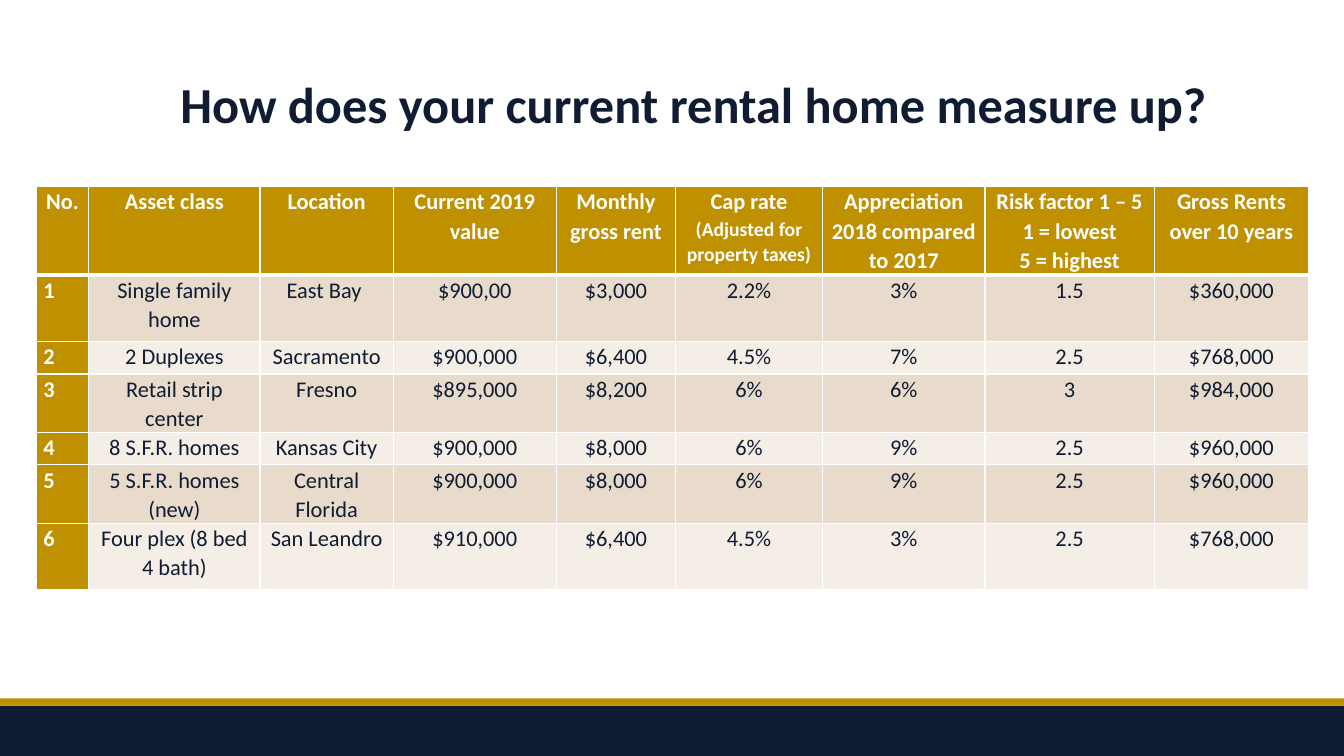
from lxml.etree import SubElement
from pptx import Presentation
from pptx.dml.color import RGBColor
from pptx.enum.shapes import MSO_SHAPE
from pptx.enum.text import MSO_ANCHOR, PP_ALIGN
from pptx.oxml.ns import qn
from pptx.util import Inches, Pt

NAVY, GOLD, WHITE = "0F1C32", "BF9000", "FFFFFF"
BANDS = ["E8DBCC", "F4EEE7"]
COL_WIDTHS = [0.52, 1.7, 1.32, 1.62, 1.18, 1.46, 1.61, 1.68, 1.53]
ROW_HEIGHTS = [0.88, 0.66, 0.32, 0.41, 0.32, 0.57, 0.66]
HEADER = [
    "No.", "Asset class", "Location", "Current 2019 value", "Monthly gross rent",
    [("Cap rate ", 16), ("(Adjusted for property taxes)", 14)],
    "Appreciation 2018 compared to 2017",
    "Risk factor 1 – 5\n1 = lowest\n5 = highest",
    "Gross Rents over 10 years",
]
ASSETS = [
    ["1", "Single family home", "East Bay ", "$900,00", "$3,000", "2.2%", "3%", "1.5", "$360,000"],
    ["2", "2 Duplexes", "Sacramento", "$900,000", "$6,400", "4.5%", "7%", "2.5", "$768,000"],
    ["3", "Retail strip center", "Fresno", "$895,000", "$8,200", "6%", "6%", "3", "$984,000"],
    ["4", "8 S.F.R. homes", "Kansas City", "$900,000", "$8,000", "6%", "9%", "2.5", "$960,000"],
    ["5", "5 S.F.R. homes (new)", "Central Florida", "$900,000", "$8,000", "6%", "9%", "2.5", "$960,000"],
    ["6", "Four plex (8 bed 4 bath)", "San Leandro", "$910,000", "$6,400", "4.5%", "3%", "2.5", "$768,000"],
]


def rgb(color):
    return RGBColor.from_string(color)


class SlideBuilder:
    def __init__(self, slide, font="Calibri"):
        self.s = slide
        self.font = font

    def style(self, p, size, color, bold, align):
        p.alignment = align
        p.font.name = self.font
        p.font.bold = bold
        p.font.color.rgb = rgb(color)
        if size:
            p.font.size = Pt(size)

    def bar(self, top, height, color):
        sp = self.s.shapes.add_shape(
            MSO_SHAPE.RECTANGLE, Inches(0), Inches(top), Inches(13.33), Inches(height))
        sp.shadow.inherit = False
        sp.fill.solid()
        sp.fill.fore_color.rgb = rgb(color)
        sp.line.fill.background()

    def title(self, text, left, top, width, height):
        sp = self.s.shapes.add_textbox(
            Inches(left), Inches(top), Inches(width), Inches(height))
        tf = sp.text_frame
        tf.word_wrap = True
        tf.vertical_anchor = MSO_ANCHOR.TOP
        tf.text = text
        self.style(tf.paragraphs[0], 36, NAVY, True, PP_ALIGN.LEFT)

    def borders(self, cell, top, bottom):
        tc_pr = cell._tc.get_or_add_tcPr()
        for side, width in (("L", 1), ("R", 1), ("T", top), ("B", bottom)):
            ln = SubElement(tc_pr, qn(f"a:ln{side}"), w=str(Pt(width)))
            SubElement(SubElement(ln, qn("a:solidFill")), qn("a:srgbClr"), val=WHITE)

    def cell(self, cell, content, fill, color, bold, align):
        cell.margin_left = cell.margin_right = Inches(0.07)
        cell.margin_top = cell.margin_bottom = 0
        cell.fill.solid()
        cell.fill.fore_color.rgb = rgb(fill)
        tf = cell.text_frame
        if isinstance(content, str):
            tf.text = content
            size = 16
        else:
            size = None
            for text, run_size in content:
                r = tf.paragraphs[0].add_run()
                r.text = text
                r.font.size = Pt(run_size)
        for p in tf.paragraphs:
            p.line_spacing = 1.07
            self.style(p, size, color, bold, align)

    def table(self, rows, left, top, widths, heights):
        table = self.s.shapes.add_table(
            len(rows), len(widths), Inches(left), Inches(top),
            Inches(sum(widths)), Inches(sum(heights))).table
        for column, width in zip(table.columns, widths):
            column.width = Inches(width)
        for row, height in zip(table.rows, heights):
            row.height = Inches(height)
        for i, row in enumerate(rows):
            for j, content in enumerate(row):
                cell = table.cell(i, j)
                heading = i == 0 or j == 0
                self.borders(cell, 3 if i == 1 else 1, 3 if i == 0 else 1)
                self.cell(
                    cell, content,
                    GOLD if heading else BANDS[(i - 1) % 2],
                    WHITE if heading else NAVY,
                    heading,
                    PP_ALIGN.LEFT if i and j == 0 else PP_ALIGN.CENTER)


def main():
    prs = Presentation()
    prs.slide_width, prs.slide_height = Inches(13.33), Inches(7.5)
    s = SlideBuilder(prs.slides.add_slide(prs.slide_layouts[6]))
    s.bar(7, 0.5, NAVY)
    s.bar(6.93, 0.07, GOLD)
    s.table([HEADER] + ASSETS, 0.36, 1.85, COL_WIDTHS, ROW_HEIGHTS)
    s.title("How does your current rental home measure up?", 1.69, 0.68, 10.57, 1.01)
    prs.save("out.pptx")


if __name__ == "__main__":
    main()
